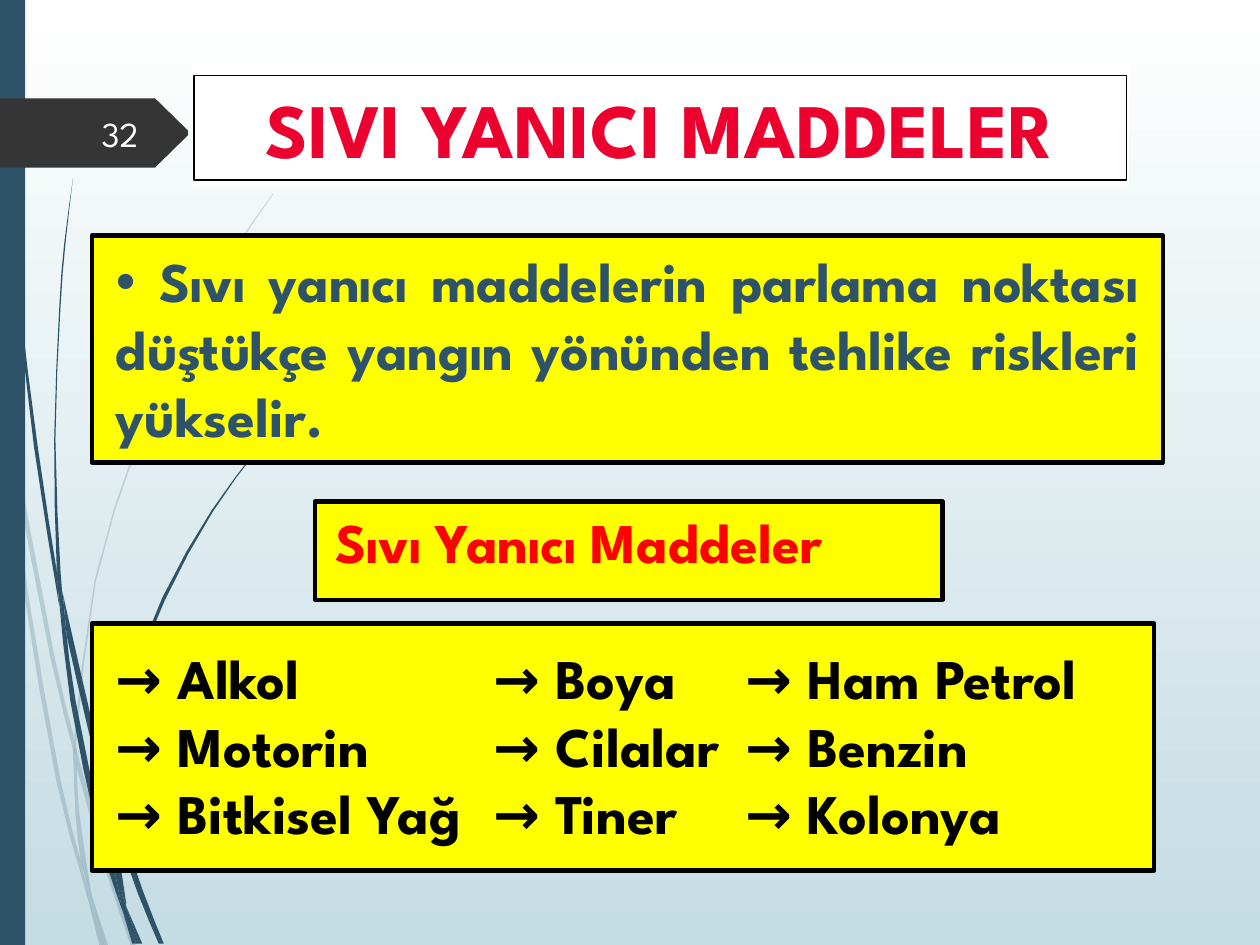
from dataclasses import dataclass

from lxml.etree import SubElement
from pptx import Presentation
from pptx.dml.color import RGBColor
from pptx.enum.shapes import MSO_SHAPE
from pptx.enum.text import MSO_ANCHOR, MSO_AUTO_SIZE, PP_ALIGN
from pptx.oxml.ns import qn
from pptx.util import Inches, Pt


@dataclass(frozen=True)
class Theme:
    font: str = "League Spartan"
    slate: str = "2E5369"
    charcoal: str = "353535"
    mist: str = "C4DCE3"
    white: str = "FFFFFF"
    number: str = "FEFFFF"
    black: str = "000000"
    yellow: str = "FFFF00"
    red: str = "FF0000"
    crimson: str = "EC002D"
    title_size: int = 44
    body_size: int = 32
    number_size: int = 20
    frame_width: float = 2.5
    title_frame_width: float = 0.75


THEME = Theme()

PALE_WISPS = [
    ([(0.08, 3.5), (0.06, 3.22), (0, 2.82)], [(0, 2.99), (0.07, 3.44)]),
    ([(0.1, 3.45), (0.43, 5.2), (0.59, 5.86)], [(0.59, 5.99), (0.4, 5.22), (0.12, 3.76)]),
    ([(0.61, 5.96), (0.64, 6.07), (0.88, 6.92), (1.08, 7.51)],
     [(1.04, 7.51), (0.85, 6.94), (0.61, 6.1)]),
    ([(0.73, 7.11), (0.86, 7.51)], [(0.83, 7.51)]),
    ([(0.08, 3.5), (0.19, 4.7), (0.45, 6.21), (0.64, 6.93), (0.7, 7.14)],
     [(0.69, 7.07), (0.64, 6.83), (0.48, 6.19), (0.22, 4.69), (0.12, 3.76)]),
    ([(0.58, 5.99), (0.6, 6.46), (0.64, 6.83), (0.67, 6.92), (0.73, 7.11)],
     [(0.72, 7.06), (0.63, 6.46), (0.61, 6.1), (0.61, 6.08)]),
    ([(0.61, 5.96), (0.61, 5.84), (0.76, 4.62), (1.11, 3.49), (1.59, 2.45), (1.87, 1.98), (2.17, 1.54)],
     [(2.17, 1.53), (1.86, 1.97), (1.58, 2.44), (1.1, 3.48), (0.75, 4.61), (0.59, 5.84)]),
    ([(0.7, 7.14), (0.79, 7.51)], [(0.82, 7.51)]),
    ([(0.61, 6.08), (0.61, 5.96), (0.59, 5.86)], [(0.58, 5.99)]),
    ([(0.65, 6.83), (0.69, 7.07), (0.7, 7.14), (0.82, 7.51)],
     [(0.83, 7.51), (0.73, 7.11), (0.67, 6.92)]),
]

DARK_WISPS = [
    ([(0.02, 0), (0.03, 0.48), (0.05, 1.1), (0.14, 2.33), (0.27, 3.55), (0.47, 4.81)],
     [(0.45, 4.53), (0.3, 3.55), (0.15, 2.32), (0.06, 1.09), (0.04, 0.48), (0.03, 0)]),
    ([(0.5, 4.72), (0.77, 5.9), (0.88, 6.31)], [(0.88, 6.45), (0.73, 5.92), (0.53, 5.05)]),
    ([(0.91, 6.41), (0.94, 6.49), (1.13, 7.06), (1.3, 7.49)],
     [(1.26, 7.49), (1.09, 7.08), (0.91, 6.56)]),
    ([(0.47, 4.77), (0.56, 5.57), (0.77, 6.59), (0.92, 7.08), (0.97, 7.22)],
     [(0.91, 6.91), (0.81, 6.57), (0.6, 5.56), (0.53, 5.05)]),
    ([(0.5, 4.72), (0.48, 4.53), (0.44, 3.49), (0.48, 2.45), (0.52, 1.93), (0.58, 1.41)],
     [(0.58, 1.41), (0.51, 1.93), (0.47, 2.45), (0.43, 3.49), (0.45, 4.49), (0.49, 4.72)]),
    ([(1, 7.19), (1.13, 7.49)], [(1.1, 7.49)]),
    ([(0.45, 4.49), (0.45, 4.53), (0.47, 4.77), (0.53, 5.05)], [(0.5, 4.72), (0.49, 4.72)]),
    ([(0.91, 6.41), (0.91, 6.33), (1.03, 5.52), (1.31, 4.76), (1.69, 4.06), (2.03, 3.59), (2.16, 3.44)],
     [(2.15, 3.44), (2.03, 3.58), (1.68, 4.05), (1.29, 4.74), (1.01, 5.51), (0.88, 6.31)]),
    ([(0.97, 7.22), (1.05, 7.49)], [(1.08, 7.49)]),
    ([(0.88, 6.45), (0.91, 6.91), (0.96, 7.06), (1, 7.19)],
     [(1, 7.16), (0.91, 6.56), (0.9, 6.51)]),
    ([(0.91, 6.91), (0.96, 7.17), (0.97, 7.22), (1.08, 7.49)],
     [(1.1, 7.49), (1, 7.19), (0.96, 7.06)]),
]

SUBSTANCES = [
    ("Alkol", "Boya", "Ham Petrol"),
    ("Motorin", "Cilalar", "Benzin"),
    ("Bitkisel Yağ", "Tiner", "Kolonya"),
]


def paint(shape, fill, line=None, width=0):
    shape.shadow.inherit = False
    shape.fill.solid()
    shape.fill.fore_color.rgb = RGBColor.from_string(fill)
    if line:
        shape.line.color.rgb = RGBColor.from_string(line)
        shape.line.width = Pt(width)
    else:
        shape.line.fill.background()


def place(shape, box):
    shape.left, shape.top, shape.width, shape.height = map(Inches, box)


def smooth(edge, steps=2):
    padded = [edge[0], *edge, edge[-1]]
    curve = [edge[0]]
    for before, start, end, after in zip(padded, padded[1:], padded[2:], padded[3:]):
        for t in (step / steps for step in range(1, steps + 1)):
            curve.append(tuple(
                b + t * (c - a) / 2 + t * t * (a - 2.5 * b + 2 * c - d / 2)
                + t ** 3 * (1.5 * (b - c) + (d - a) / 2)
                for a, b, c, d in zip(before, start, end, after)))
    return curve


def add_outline(slide, points, color, opacity=100):
    corners = [(Inches(x), Inches(y)) for x, y in points]
    builder = slide.shapes.build_freeform(*corners[0])
    builder.add_line_segments(corners[1:])
    outline = builder.convert_to_shape()
    paint(outline, color)
    if opacity < 100:
        tint = outline.fill._xPr.find(f".//{qn('a:srgbClr')}")
        SubElement(tint, qn("a:alpha"), val=str(opacity * 1000))


def write(shape, lines, color, size, align, insets=(0.1, 0.05, 0.1, 0.05), bold=True,
          bullet=None, tabs=(), anchor=MSO_ANCHOR.TOP):
    frame = shape.text_frame
    frame.word_wrap = True
    frame.auto_size = MSO_AUTO_SIZE.NONE
    frame.vertical_anchor = anchor
    frame.margin_left, frame.margin_top, frame.margin_right, frame.margin_bottom = map(Inches, insets)
    frame.text = "\n".join(lines)
    for paragraph in frame.paragraphs:
        paragraph.alignment = align
        paragraph.space_before = Pt(0)
        properties = paragraph._p.get_or_add_pPr()
        if bullet:
            properties.set("marL", "0")
            properties.set("indent", str(Inches(-0.22)))
            SubElement(SubElement(properties, qn("a:buClr")), qn("a:srgbClr"), val=color)
            SubElement(properties, qn("a:buChar"), char=bullet)
        if tabs:
            stops = SubElement(properties, qn("a:tabLst"))
            for tab in tabs:
                SubElement(stops, qn("a:tab"), pos=str(Inches(tab)), algn="l")
        paragraph.font.name = THEME.font
        paragraph.font.size = Pt(size)
        paragraph.font.bold = bold
        paragraph.font.color.rgb = RGBColor.from_string(color)


def add_backdrop(slide, width, height):
    backdrop = slide.background.fill
    backdrop.gradient()
    backdrop.gradient_angle = 270
    for stop, color, position in zip(backdrop.gradient_stops, (THEME.white, THEME.mist), (0, 1)):
        stop.color.rgb = RGBColor.from_string(color)
        stop.position = position
    for wisps, opacity in ((PALE_WISPS, 20), (DARK_WISPS, 100)):
        for outward, back in wisps:
            add_outline(slide, smooth(outward) + smooth(back), THEME.slate, opacity)
    band = slide.shapes.add_shape(MSO_SHAPE.RECTANGLE, 0, 0, Inches(width), Inches(height))
    paint(band, THEME.slate)


def add_page_flag(slide, number, box):
    left, top, width, height = box
    right, bottom, shoulder = left + width, top + height, left + width - 0.26
    tip = top + height / 2
    add_outline(slide, [(left, top), (shoulder, top), (right, tip - 0.02), (right, tip + 0.02),
                        (shoulder, bottom), (left, bottom)], THEME.charcoal)
    page = slide.shapes.add_textbox(*map(Inches, (left + 0.56, top + 0.08, 0.64, 0.4)))
    write(page, [number], THEME.number, THEME.number_size, PP_ALIGN.RIGHT,
          bold=False, anchor=MSO_ANCHOR.MIDDLE)


def add_panel(slide, panel, box, lines, color, align, insets, **options):
    slide.shapes._spTree.append(panel._element)
    place(panel, box)
    paint(panel, THEME.yellow, THEME.black, THEME.frame_width)
    write(panel, lines, color, THEME.body_size, align, insets, **options)


def add_title(slide, title, box):
    left, top, width, height = box
    halo = slide.shapes.add_shape(
        MSO_SHAPE.RECTANGLE, *map(Inches, (left, top - 0.08, width, height + 0.12)))
    paint(halo, THEME.white, THEME.white, THEME.frame_width)
    heading = slide.shapes.title
    slide.shapes._spTree.append(heading._element)
    place(heading, box)
    paint(heading, THEME.white, THEME.black, THEME.title_frame_width)
    write(heading, [title], THEME.crimson, THEME.title_size, PP_ALIGN.CENTER)


def main():
    deck = Presentation()
    deck.slide_width, deck.slide_height = Inches(10), Inches(7.5)
    slide = deck.slides.add_slide(deck.slide_layouts[1])

    add_backdrop(slide, 0.2, 7.5)
    add_page_flag(slide, "32", (0, 0.78, 1.49, 0.55))
    add_panel(slide, slide.placeholders[1], (0.73, 1.87, 8.5, 1.8),
              [" Sıvı yanıcı maddelerin parlama noktası düştükçe yangın yönünden tehlike riskleri yükselir."],
              THEME.slate, PP_ALIGN.JUSTIFY, (0.19, 0.09, 0.18, 0.05), bullet="•")
    caption, substances = (slide.shapes.add_textbox(0, 0, 0, 0) for _ in range(2))
    add_panel(slide, caption, (2.5, 3.98, 4.98, 0.78), ["Sıvı Yanıcı Maddeler"],
              THEME.red, PP_ALIGN.LEFT, (0.16, 0.05, 0.14, 0.05))
    add_panel(slide, substances, (0.73, 4.95, 8.43, 1.96),
              ["\t".join(f"→ {name}" for name in row) for row in SUBSTANCES],
              THEME.black, PP_ALIGN.JUSTIFY, (0.19, 0.16, 0.18, 0.05), tabs=(3, 5))
    add_title(slide, "SIVI YANICI MADDELER", (1.54, 0.6, 7.4, 0.83))
    deck.save("out.pptx")


if __name__ == "__main__":
    main()
